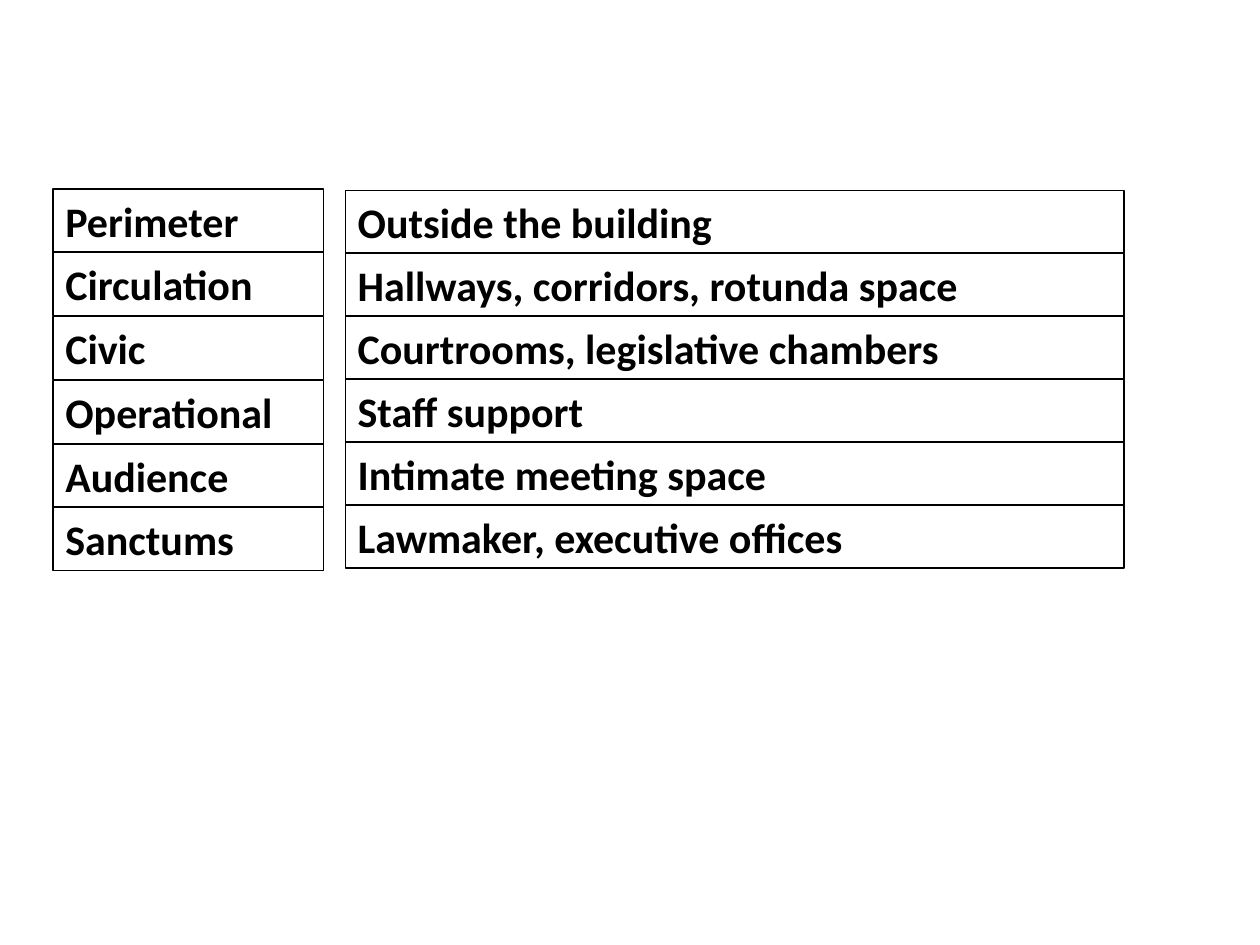
from pptx import Presentation
from pptx.dml.color import RGBColor
from pptx.enum import text
from pptx.util import Inches, Pt

BLACK = RGBColor(0, 0, 0)
BOX_HEIGHT = Inches(0.5)

ZONES = ["Perimeter", "Circulation", "Civic", "Operational", "Audience", "Sanctums"]
PLACES = [
    "Outside the building",
    "Hallways, corridors, rotunda space",
    "Courtrooms, legislative chambers",
    "Staff support",
    "Intimate meeting space",
    "Lawmaker, executive offices",
]


def add_label(s, label, left, top, width):
    sp = s.shapes.add_textbox(left, top, width, BOX_HEIGHT)
    sp.line.color.rgb = BLACK
    sp.line.width = Pt(0.75)
    tf = sp.text_frame
    tf.word_wrap = True
    tf.auto_size = text.MSO_AUTO_SIZE.SHAPE_TO_FIT_TEXT
    r = tf.paragraphs[0].add_run()
    r.text = label
    r.font.name = "Calibri"
    r.font.size = Pt(24)
    r.font.bold = True
    r.font.color.rgb = BLACK


def add_column(s, labels, left, top, width, height):
    pitch = (height - BOX_HEIGHT) / (len(labels) - 1)
    for i, label in enumerate(labels):
        add_label(s, label, left, round(top + i * pitch), width)


def main():
    prs = Presentation()
    prs.slide_width = Inches(10)
    prs.slide_height = Inches(7.5)
    s = prs.slides.add_slide(prs.slide_layouts[6])
    add_column(s, ZONES, Inches(0.42), Inches(1.5), Inches(2.15), Inches(3.03))
    add_column(s, PLACES, Inches(2.74), Inches(1.51), Inches(6.18), Inches(3))
    prs.save("out.pptx")


if __name__ == "__main__":
    main()
